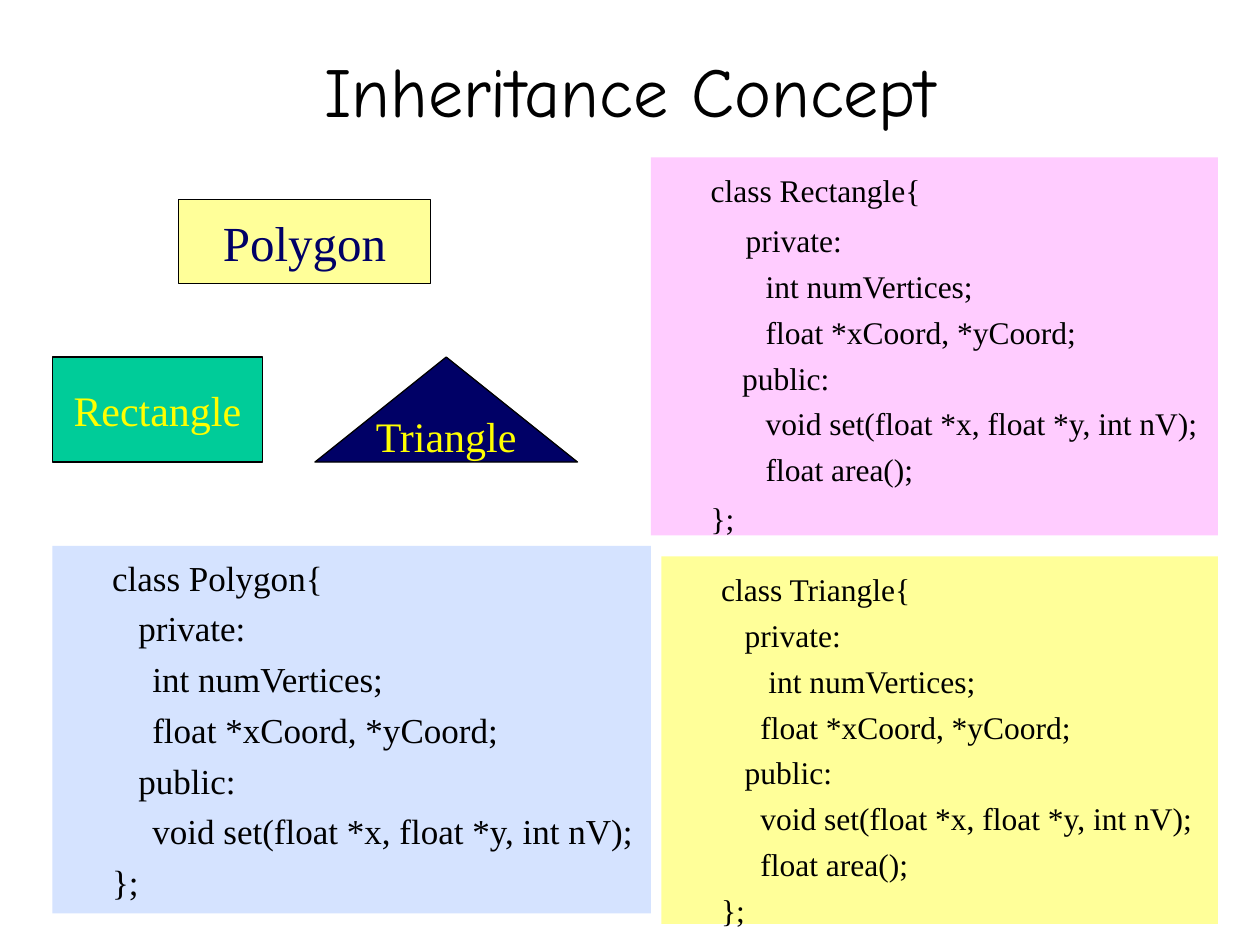
from pptx import Presentation
from pptx.dml.color import RGBColor
from pptx.enum.shapes import MSO_SHAPE as Shape
from pptx.enum.text import MSO_ANCHOR as Anchor, PP_ALIGN as Align
from pptx.util import Inches, Pt

COLORS = {
    "black": "000000", "navy": "000066", "green": "00CC99", "bright": "FFFF00",
    "pink": "FFCCFF", "cream": "FFFF99", "sky": "D5E3FF",
}
SERIF = "Times New Roman"
RECTANGLE_CODE = """\t|class Rectangle{
\t    |private:
\t       int numVertices;
\t       float *xCoord, *yCoord;
\t    public:
\t       void set(float *x, float *y, int nV);
\t       float area();
\t|};"""
POLYGON_CODE = """\tclass Polygon{
\t   private:
          int numVertices;
          float *xCoord, *yCoord;
\t   public:
          void set(float *x, float *y, int nV);
\t};"""
TRIANGLE_CODE = """\t|class Triangle{
\t   private:
\t      int numVertices;
           float *xCoord, *yCoord;
\t   public:
           void set(float *x, float *y, int nV);
\t     float area();
\t};"""


class Deck:
    """Draws styled elements on a slide with a grid of 120 columns and 90 rows."""

    def __init__(self):
        self.presentation = Presentation()
        self.presentation.slide_width = Inches(10)
        self.presentation.slide_height = Inches(7.5)
        self.slide = self.presentation.slides.add_slide(self.presentation.slide_layouts[6])

    def place(self, column, row, columns, rows):
        width, height = self.presentation.slide_width, self.presentation.slide_height
        return [round(value) for value in (
            width * column / 120, height * row / 90, width * columns / 120, height * rows / 90)]

    def add_run(self, paragraph, text, size, color="black", font=SERIF):
        run = paragraph.add_run()
        run.text = text
        run.font.size = Pt(size)
        run.font.name = font
        run.font.color.rgb = RGBColor.from_string(COLORS[color])

    def add_shape(self, kind, area, fill, outlined):
        shape = self.slide.shapes.add_shape(kind, *self.place(*area))
        shape.shadow.inherit = False
        shape.fill.solid()
        shape.fill.fore_color.rgb = RGBColor.from_string(COLORS[fill])
        if outlined:
            shape.line.color.rgb = RGBColor.from_string(COLORS["black"])
            shape.line.width = Pt(0.75)
        else:
            shape.line.fill.background()
        return shape

    def add_title(self, text, area):
        frame = self.slide.shapes.add_textbox(*self.place(*area)).text_frame
        frame.word_wrap = True
        frame.vertical_anchor = Anchor.MIDDLE
        paragraph = frame.paragraphs[0]
        paragraph.alignment = Align.CENTER
        self.add_run(paragraph, text, 40, font="Comic Neue")

    def add_node(self, text, kind, area, fill, color, size):
        frame = self.add_shape(kind, area, fill, True).text_frame
        frame.word_wrap = False
        frame.vertical_anchor = Anchor.MIDDLE
        paragraph = frame.paragraphs[0]
        paragraph.alignment = Align.CENTER
        self.add_run(paragraph, text, size, color)

    def add_code(self, code, area, fill, size):
        frame = self.add_shape(Shape.RECTANGLE, area, fill, False).text_frame
        frame.word_wrap = True
        frame.vertical_anchor = Anchor.TOP
        frame.margin_top = Inches(0.08)
        for index, line in enumerate(code.split("\n")):
            paragraph = frame.add_paragraph() if index else frame.paragraphs[0]
            paragraph.alignment = Align.LEFT
            paragraph.space_before = Pt(size / 4 if index else 0)
            properties = paragraph._p.get_or_add_pPr()
            properties.set("marL", str(Inches(0.375)))
            properties.set("indent", str(-Inches(0.375)))
            lead, _, body = line.rpartition("|")
            if lead:
                self.add_run(paragraph, lead, 20)
            self.add_run(paragraph, body, size)


def main():
    deck = Deck()
    deck.add_code(RECTANGLE_CODE, (62, 15, 54, 36), "pink", 18)
    deck.add_title("Inheritance Concept", (9, 4, 102, 9))
    deck.add_node("Rectangle", Shape.RECTANGLE, (5, 34, 20, 10), "green", "bright", 24)
    deck.add_node("Triangle", Shape.ISOSCELES_TRIANGLE, (30, 34, 25, 10), "navy", "bright", 24)
    deck.add_node("Polygon", Shape.RECTANGLE, (17, 19, 24, 8), "cream", "navy", 28)
    deck.add_code(POLYGON_CODE, (5, 52, 57, 35), "sky", 20)
    deck.add_code(TRIANGLE_CODE, (63, 53, 53, 35), "cream", 18)
    deck.presentation.save("out.pptx")


if __name__ == "__main__":
    main()
